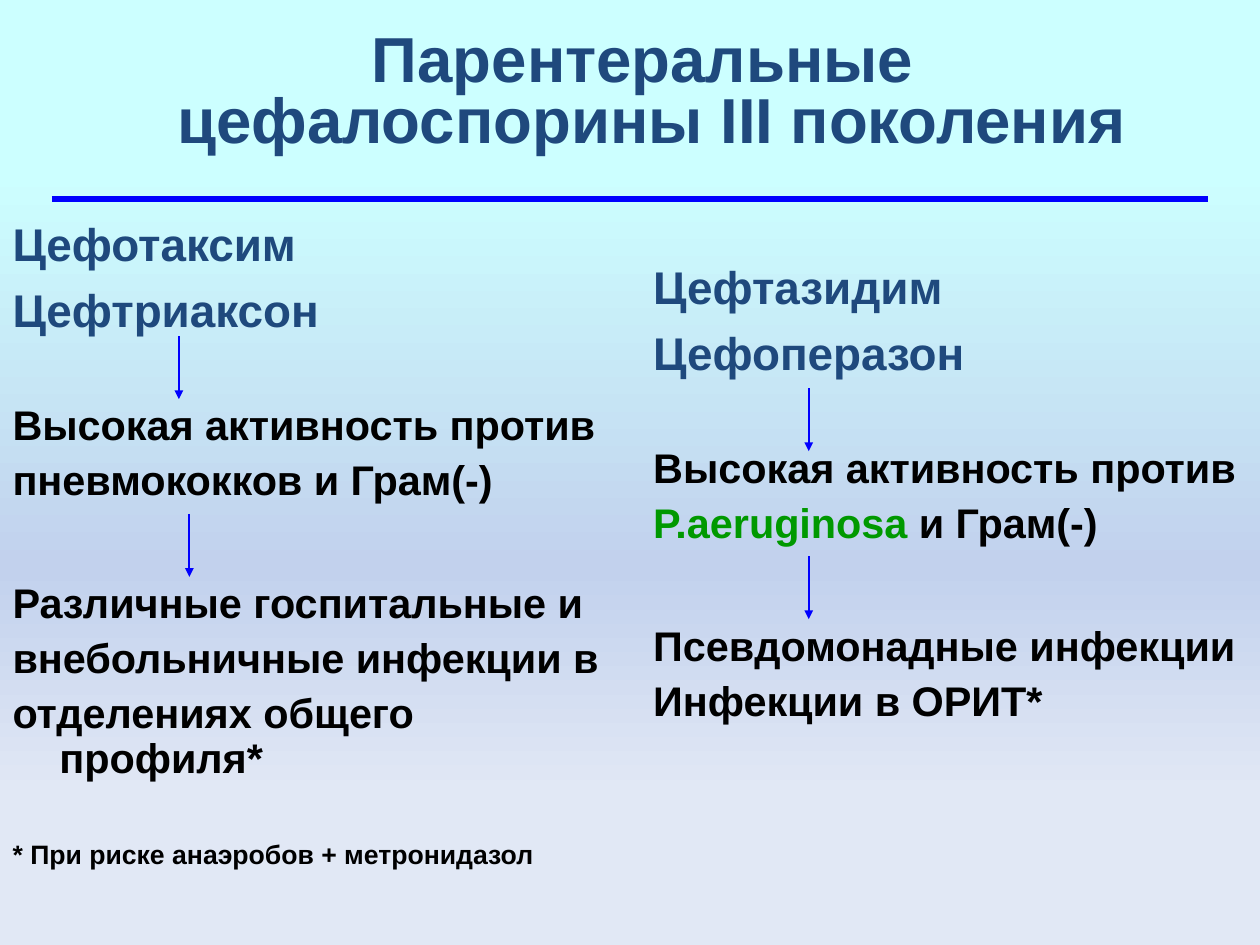
from copy import deepcopy

from lxml.etree import SubElement
from pptx import Presentation
from pptx.dml.color import RGBColor
from pptx.enum.text import MSO_ANCHOR, MSO_AUTO_SIZE, PP_ALIGN
from pptx.oxml.ns import qn
from pptx.util import Cm, Pt

NAVY, BLACK, GREEN, BLUE = "1F497D", "000000", "009900", "0000FF"
BACKGROUND = [(0.18, "CCFFFF"), (0.6, "C2D1ED"), (0.84, "E1E8F5")]
DRUG = dict(size=31, color=NAVY, before=7.5)
BODY = dict(size=28, spacing=0.9, before=7)
AFTER_DRUGS = dict(BODY, before=46)
AFTER_ACTIVITY = dict(BODY, before=53)
FOOTNOTE = dict(size=18, spacing=0.9, before=40)

LEFT_COLUMN = [
    ("Цефотаксим", dict(DRUG, before=0)),
    ("Цефтриаксон", DRUG),
    ("Высокая активность против", AFTER_DRUGS),
    ("пневмококков и Грам(-)", BODY),
    ("Различные госпитальные и", AFTER_ACTIVITY),
    ("внебольничные инфекции в", BODY),
    ("отделениях общего профиля*", BODY),
    ("* При риске анаэробов + метронидазол", FOOTNOTE),
]
RIGHT_COLUMN = [
    ("Цефтазидим", dict(DRUG, before=0)),
    ("Цефоперазон", DRUG),
    ("Высокая активность против", AFTER_DRUGS),
    ([("P.aeruginosa", GREEN), (" и Грам(-)", BLACK)], BODY),
    ("Псевдомонадные инфекции", AFTER_ACTIVITY),
    ("Инфекции в ОРИТ*", BODY),
]
ARROWS = [(4.27, 8.03), (4.52, 12.27), (19.3, 9.27), (19.3, 13.28)]
ARROW_LENGTH = 1.5


def rgb(value):
    return RGBColor.from_string(value)


def write(p, text, size=28, color=BLACK, before=0, spacing=1.0,
          align=PP_ALIGN.LEFT, hanging=0):
    p.alignment = align
    p.space_before = Pt(before)
    p.line_spacing = spacing
    if hanging:
        pPr = p._p.get_or_add_pPr()
        pPr.set("marL", str(Cm(hanging)))
        pPr.set("indent", str(-Cm(hanging)))
    for part, part_color in [(text, color)] if isinstance(text, str) else text:
        r = p.add_run()
        r.text = part
        r.font.name = "Arial"
        r.font.size = Pt(size)
        r.font.bold = True
        r.font.color.rgb = rgb(part_color)


class Deck:
    """Holds the style and the current slide of the presentation."""

    def __init__(self, width, height):
        self.prs = Presentation()
        self.prs.slide_width, self.prs.slide_height = Cm(width), Cm(height)
        self.s = self.prs.slides.add_slide(self.prs.slide_layouts[5])

    def background(self, stops):
        fill = self.s.background.fill
        fill.gradient()
        fill.gradient_angle = 270
        gs_list = next(self.s._element.iter(qn("a:gsLst")))
        while len(gs_list) < len(stops):
            gs_list.append(deepcopy(gs_list[-1]))
        for stop, (position, color) in zip(fill.gradient_stops, stops):
            stop.position = position
            stop.color.rgb = rgb(color)

    def fill_frame(self, sp, paragraphs, anchor, **common):
        tf = sp.text_frame
        tf.word_wrap = True
        tf.auto_size = MSO_AUTO_SIZE.NONE
        tf.vertical_anchor = anchor
        tf.margin_left = tf.margin_right = Cm(0.3)
        tf.margin_top = tf.margin_bottom = Cm(0.15)
        for i, (text, style) in enumerate(paragraphs):
            p = tf.add_paragraph() if i else tf.paragraphs[0]
            write(p, text, **style, **common)

    def title(self, lines, x, y, w, h):
        sp = self.s.shapes.title
        sp.left, sp.top, sp.width, sp.height = Cm(x), Cm(y), Cm(w), Cm(h)
        style = dict(size=43, color=NAVY, spacing=0.8, align=PP_ALIGN.CENTER)
        self.fill_frame(sp, [(line, style) for line in lines], MSO_ANCHOR.MIDDLE)

    def column(self, paragraphs, x, y, w, h):
        sp = self.s.shapes.add_textbox(Cm(x), Cm(y), Cm(w), Cm(h))
        self.fill_frame(sp, paragraphs, MSO_ANCHOR.TOP, hanging=1.12)

    def line(self, x1, y1, x2, y2, width, arrow=False):
        sp = self.s.shapes.add_connector(1, Cm(x1), Cm(y1), Cm(x2), Cm(y2))
        sp.line.color.rgb = rgb(BLUE)
        sp.line.width = Pt(width)
        if arrow:
            SubElement(sp.line._get_or_add_ln(), qn("a:tailEnd"), type="triangle")
        SubElement(sp._element.spPr, qn("a:effectLst"))


def main():
    deck = Deck(30.07, 22.56)
    deck.background(BACKGROUND)
    deck.title(["Парентеральные ", "цефалоспорины III поколения"],
               2.77, 0.76, 25.55, 3)
    deck.column(LEFT_COLUMN, 0, 5, 15.04, 16.03)
    deck.column(RIGHT_COLUMN, 15.29, 6.02, 14.78, 13.54)
    deck.line(1.24, 4.75, 28.83, 4.75, 4.5)
    for x, y in ARROWS:
        deck.line(x, y, x, y + ARROW_LENGTH, 1.5, arrow=True)
    deck.prs.save("out.pptx")


if __name__ == "__main__":
    main()
